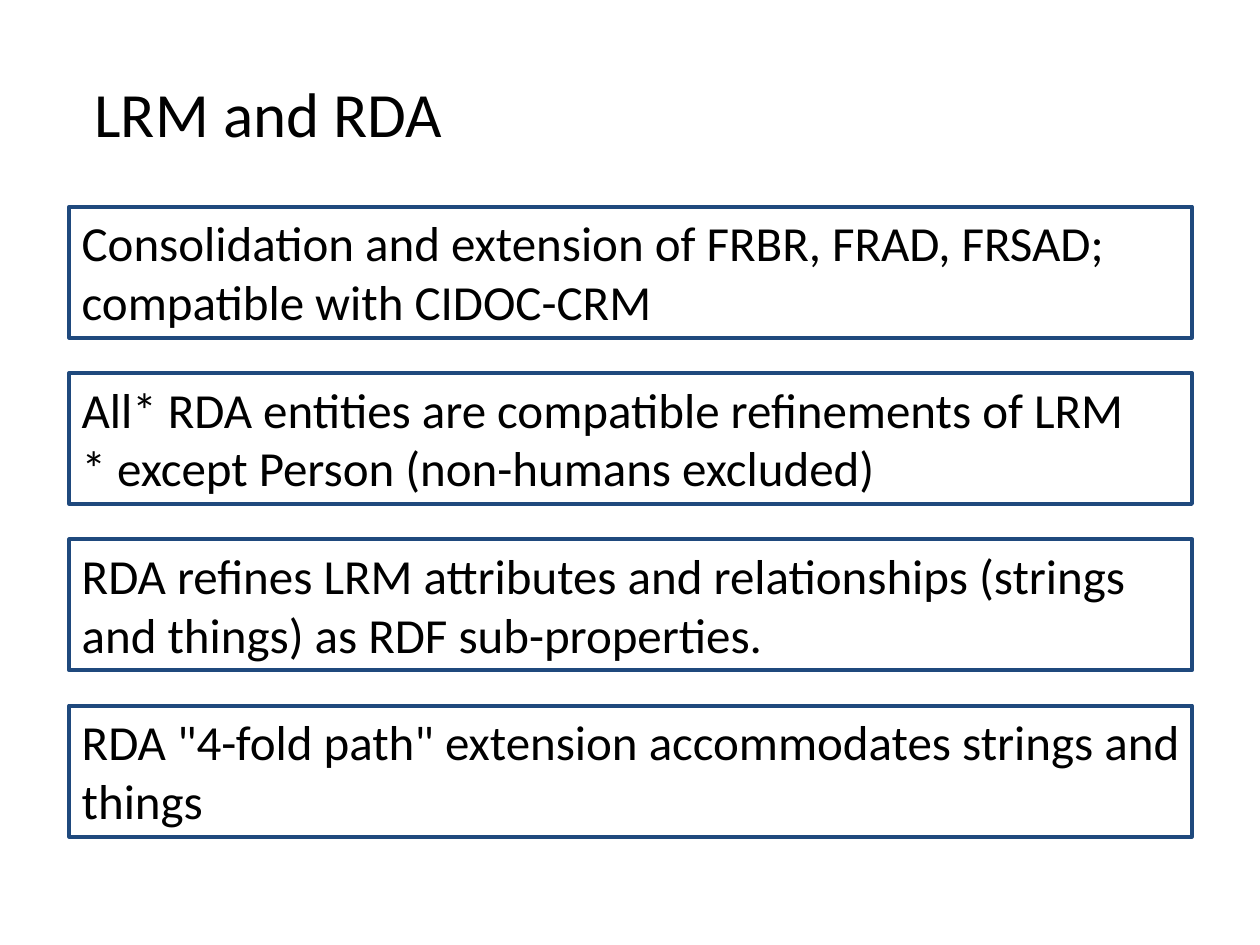
from pptx import Presentation
from pptx.dml.color import RGBColor
from pptx.enum import shapes, text
from pptx.util import Inches, Pt

COLORS = {"text": "000000", "border": "1F497D"}
FONT = "Calibri"
STATEMENTS = [
    "Consolidation and extension of FRBR, FRAD, FRSAD; compatible with CIDOC-CRM",
    "All* RDA entities are compatible refinements of LRM\n"
    "* except Person (non-humans excluded)",
    "RDA refines LRM attributes and relationships (strings and things) "
    "as RDF sub-properties.",
    'RDA "4-fold path" extension accommodates strings and things',
]


def fill_text(sp, content, size, anchor):
    tf = sp.text_frame
    tf.text = content
    tf.word_wrap = True
    tf.auto_size = text.MSO_AUTO_SIZE.NONE
    tf.vertical_anchor = anchor
    for p in tf.paragraphs:
        p.alignment = text.PP_ALIGN.LEFT
        for r in p.runs:
            r.font.name = FONT
            r.font.size = Pt(size)
            r.font.color.rgb = RGBColor.from_string(COLORS["text"])


def add_title(s, content, left, top, width, height):
    sp = s.shapes.title
    sp.left, sp.top, sp.width, sp.height = left, top, width, height
    fill_text(sp, content, 36, text.MSO_ANCHOR.TOP)


def add_statements(s, statements, left, top, width, box_height, gap):
    """Stack one outlined box per statement, evenly spaced."""
    for i, statement in enumerate(statements):
        sp = s.shapes.add_shape(
            shapes.MSO_SHAPE.RECTANGLE,
            left, top + i * (box_height + gap), width, box_height)
        sp.shadow.inherit = False
        sp.fill.background()
        sp.line.color.rgb = RGBColor.from_string(COLORS["border"])
        sp.line.width = Pt(2.25)
        fill_text(sp, statement, 28, text.MSO_ANCHOR.TOP)


def main():
    prs = Presentation()
    prs.slide_width, prs.slide_height = Inches(10), Inches(7.5)
    s = prs.slides.add_slide(prs.slide_layouts[5])
    add_title(s, "LRM and RDA",
              Inches(0.65), Inches(0.54), Inches(2.99), Inches(0.71))
    add_statements(s, STATEMENTS, Inches(0.55), Inches(1.64),
                   Inches(8.91), Inches(1.04), Inches(0.28))
    prs.save("out.pptx")


if __name__ == "__main__":
    main()
